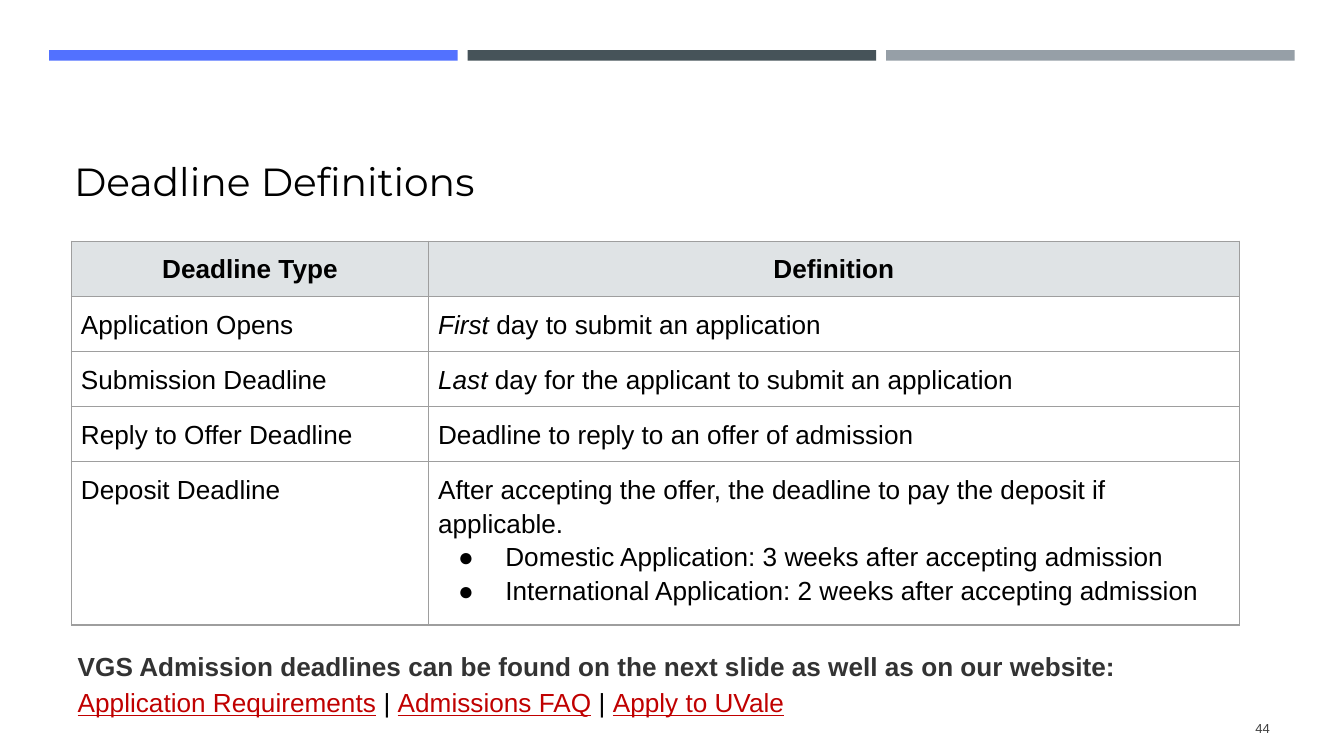
from dataclasses import dataclass

from lxml import etree
from pptx import Presentation
from pptx.dml.color import RGBColor
from pptx.enum.shapes import MSO_SHAPE as Shape
from pptx.enum.text import MSO_ANCHOR as Anchor, PP_ALIGN as Align
from pptx.oxml.ns import qn
from pptx.util import Cm, Pt

COLOURS = {
    "blue": "5271FF", "slate": "465359", "grey": "969FA7",
    "header": "DFE3E5", "border": "9E9E9E", "black": "000000",
    "note": "333333", "link": "C00000", "number": "3F3F3F",
}


@dataclass
class Span:
    text: str
    italic: bool | None = None
    bold: bool | None = None
    underline: bool | None = None
    colour: str | None = None


@dataclass
class Para:
    spans: list[Span]
    size: float = 14
    font: str = "Arial"
    colour: str = "black"
    bold: bool = False
    align: Align = Align.LEFT
    spacing: float = 1.15
    before: float = 0
    bullet: str = ""


@dataclass
class Area:
    left: float
    top: float
    width: float
    height: float

    def lengths(self) -> list[Cm]:
        return [Cm(v) for v in (self.left, self.top, self.width, self.height)]


def rgb(name: str) -> RGBColor:
    return RGBColor.from_string(COLOURS[name])


def add_solid(parent, name: str) -> None:
    fill = etree.SubElement(parent, qn("a:solidFill"))
    etree.SubElement(fill, qn("a:srgbClr"), val=COLOURS[name])


def add_bullet(paragraph, symbol: str) -> None:
    properties = paragraph._p.get_or_add_pPr()
    properties.set("marL", str(Cm(1.27)))
    properties.set("indent", str(-Cm(0.89)))
    colour = etree.SubElement(properties, qn("a:buClr"))
    etree.SubElement(colour, qn("a:srgbClr"), val=COLOURS["black"])
    etree.SubElement(properties, qn("a:buFont"), typeface="Arial")
    etree.SubElement(properties, qn("a:buChar"), char=symbol)


def write(frame, paras: list[Para]) -> None:
    for index, para in enumerate(paras):
        paragraph = frame.add_paragraph() if index else frame.paragraphs[0]
        if para.bullet:
            add_bullet(paragraph, para.bullet)
        paragraph.alignment = para.align
        paragraph.line_spacing = para.spacing
        paragraph.space_before = Pt(para.before)
        font = paragraph.font
        font.size, font.name, font.bold = Pt(para.size), para.font, para.bold
        font.color.rgb = rgb(para.colour)
        for span in para.spans:
            if span.text == "\n":
                paragraph.add_line_break()
                continue
            run = paragraph.add_run()
            run.text = span.text
            run.font.italic = span.italic
            run.font.bold = span.bold
            run.font.underline = span.underline
            if span.colour:
                run.font.color.rgb = rgb(span.colour)


def add_text(page, area: Area, paras: list[Para], anchor: Anchor,
             side: float, edge: float) -> None:
    frame = page.shapes.add_textbox(*area.lengths()).text_frame
    frame.word_wrap = True
    frame.vertical_anchor = anchor
    frame.margin_left = frame.margin_right = Cm(side)
    frame.margin_top = frame.margin_bottom = Cm(edge)
    write(frame, paras)


def add_bar(page, area: Area, colour: str) -> None:
    bar = page.shapes.add_shape(Shape.RECTANGLE, *area.lengths())
    bar.shadow.inherit = False
    bar.fill.solid()
    bar.fill.fore_color.rgb = rgb(colour)
    bar.line.fill.background()


def style_cell(cell, is_header: bool) -> None:
    cell.margin_left = cell.margin_right = Cm(0.18)
    cell.margin_top = cell.margin_bottom = Cm(0.18)
    properties = cell._tc.get_or_add_tcPr()
    for side in ("a:lnL", "a:lnR", "a:lnT", "a:lnB"):
        line = etree.SubElement(properties, qn(side), w=str(Pt(0.75)))
        add_solid(line, "border")
    if is_header:
        cell.fill.solid()
        cell.fill.fore_color.rgb = rgb("header")
    else:
        cell.fill.background()


def add_grid(page, area: Area, widths: list[float], heights: list[float],
             rows: list[list[list[Para]]]) -> None:
    table = page.shapes.add_table(len(rows), len(widths), *area.lengths()).table
    table.first_row = table.horz_banding = False
    for column, width in zip(table.columns, widths):
        column.width = Cm(width)
    for row, height in zip(table.rows, heights):
        row.height = Cm(height)
    for row_index, row in enumerate(rows):
        for column_index, paras in enumerate(row):
            cell = table.cell(row_index, column_index)
            style_cell(cell, row_index == 0)
            write(cell.text_frame, paras)


def plain(text: str, **style) -> Para:
    return Para([Span(text)], **style)


def main() -> None:
    deck = Presentation()
    deck.slide_width, deck.slide_height = Cm(25.4), Cm(14.29)
    page = deck.slides.add_slide(deck.slide_layouts[6])

    # Bars across the top
    for index, colour in enumerate(("blue", "slate", "grey")):
        add_bar(page, Area(0.93 + 7.91 * index, 0.95, 7.72, 0.2), colour)

    # Title
    title = plain("Deadline Definitions", size=21, font="Montserrat", spacing=1)
    add_text(page, Area(1.22, 1.47, 22.99, 2.49), [title], Anchor.BOTTOM, 0.18, 0.1)

    # Table of deadlines
    header = {"bold": True, "align": Align.CENTER}
    rows = [
        [[plain("Deadline Type", **header)], [plain("Definition", **header)]],
        [[plain("Application Opens")],
         [Para([Span("First ", italic=True), Span("day to submit an application")])]],
        [[plain("Submission Deadline")],
         [Para([Span("Last ", italic=True),
                Span("day for the applicant to submit an application")])]],
        [[plain("Reply to Offer Deadline")],
         [plain("Deadline to reply to an offer of admission")]],
        [[plain("Deposit Deadline")],
         [plain("After accepting the offer, the deadline to pay the deposit if applicable."),
          plain("Domestic Application: 3 weeks after accepting admission", bullet="●"),
          plain("International Application: 2 weeks after accepting admission", bullet="●")]],
    ]
    widths, heights = [6.75, 15.32], [1.02] * 4 + [2.93]
    add_grid(page, Area(1.35, 4.56, sum(widths), sum(heights)), widths, heights, rows)

    # Note with the names of the web pages
    spans = [
        Span("VGS Admission deadlines can be found on the next slide"
             " as well as on our website:", bold=True, colour="note"),
        Span("\n"),
    ]
    for index, name in enumerate(("Application Requirements", "Admissions FAQ",
                                  "Apply to UVale")):
        if index:
            spans.append(Span(" | "))
        spans.append(Span(name, underline=True, colour="link"))
    add_text(page, Area(1.22, 11.96, 22.07, 2.3), [Para(spans, before=12)],
             Anchor.TOP, 0.25, 0.25)

    # Page number
    number = plain("44", size=7, colour="number", align=Align.RIGHT, spacing=1)
    add_text(page, Area(22, 13.39, 2.18, 0.76), [number], Anchor.MIDDLE, 0.18, 0.1)

    deck.save("out.pptx")


if __name__ == "__main__":
    main()
